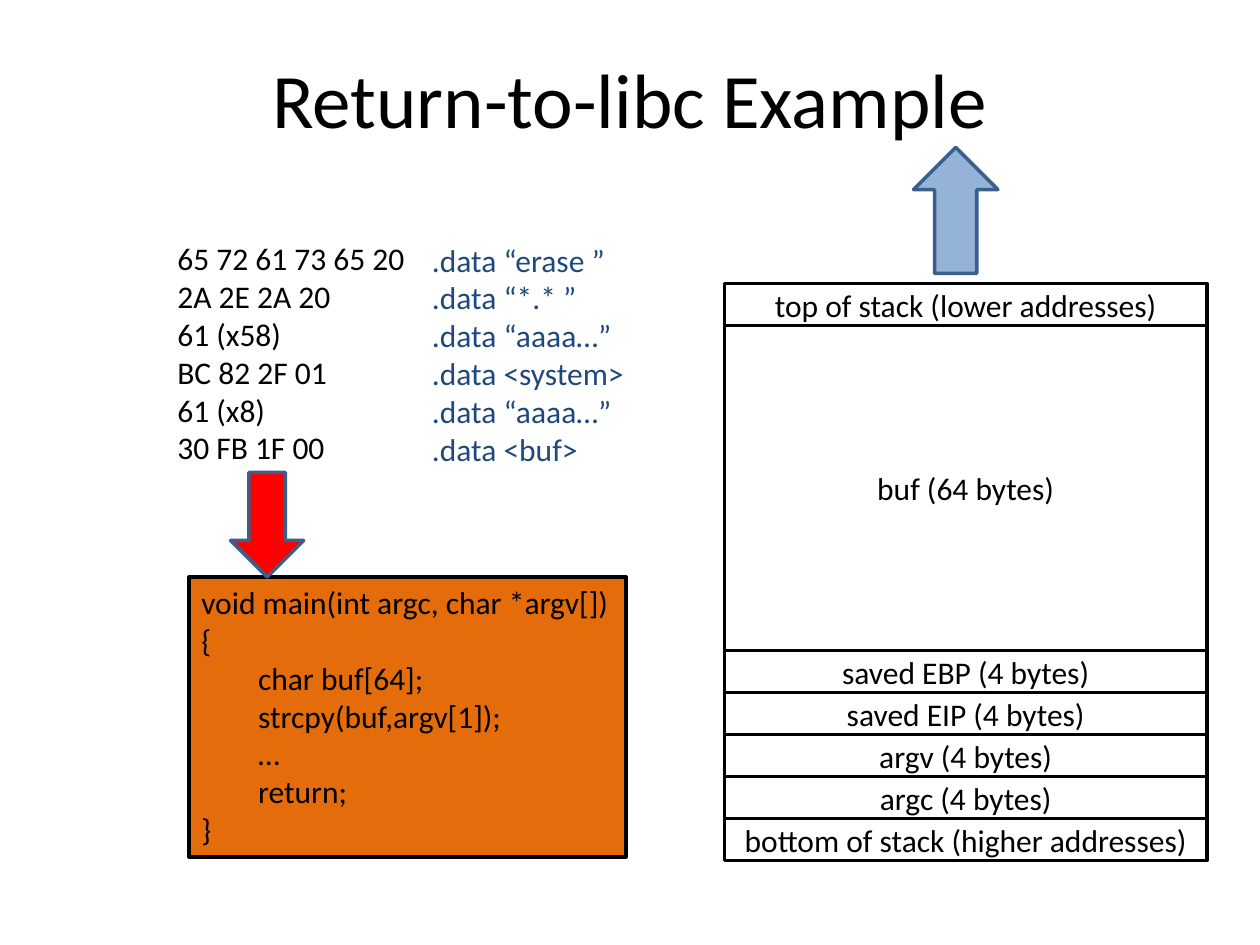
from dataclasses import dataclass

from pptx import Presentation
from pptx.dml.color import RGBColor
from pptx.enum import shapes, text
from pptx.util import Inches, Pt

FONT = "Calibri"
BLACK, NAVY, STEEL = "000000", "1F497D", "3A5F8C"
CODE_INDENT = 0.45


@dataclass
class Box:
    left: float
    top: float
    width: float
    height: float

    def lengths(self) -> list:
        return [Inches(v) for v in (self.left, self.top, self.width, self.height)]


@dataclass
class StackSlot:
    label: str
    height: float = 1 / 3


@dataclass
class Arrow:
    kind: shapes.MSO_SHAPE
    box: Box
    fill: str


def colour(hex_value: str) -> RGBColor:
    return RGBColor.from_string(hex_value)


def write_lines(shape, lines: list[str], size: float = 18, ink: str = BLACK,
                align=text.PP_ALIGN.LEFT, anchor=text.MSO_ANCHOR.TOP,
                wrap: bool = False) -> None:
    """Fill a shape with one paragraph per line; a leading tab indents it."""
    frame = shape.text_frame
    frame.word_wrap = wrap
    frame.vertical_anchor = anchor
    for number, line in enumerate(lines):
        paragraph = frame.paragraphs[0] if number == 0 else frame.add_paragraph()
        paragraph.text = line.lstrip("\t")
        paragraph.alignment = align
        paragraph.font.name = FONT
        paragraph.font.size = Pt(size)
        paragraph.font.color.rgb = colour(ink)
        if line.startswith("\t"):
            properties = paragraph._p.get_or_add_pPr()
            properties.set("marL", str(Inches(CODE_INDENT)))
            properties.set("indent", "0")


def draw_shape(slide, kind, box: Box, fill: str | None = None, line: str = BLACK):
    shape = slide.shapes.add_shape(kind, *box.lengths())
    shape.shadow.inherit = False
    if fill:
        shape.fill.solid()
        shape.fill.fore_color.rgb = colour(fill)
    else:
        shape.fill.background()
    shape.line.color.rgb = colour(line)
    shape.line.width = Pt(2)
    return shape


def draw_stack(slide, slots: list[StackSlot], left: float, top: float, width: float) -> None:
    for slot in slots:
        cell = draw_shape(slide, shapes.MSO_SHAPE.RECTANGLE,
                          Box(left, top, width, slot.height))
        write_lines(cell, [slot.label], align=text.PP_ALIGN.CENTER,
                    anchor=text.MSO_ANCHOR.MIDDLE, wrap=True)
        top += slot.height


PAYLOAD_BYTES = ["65 72 61 73 65 20", "2A 2E 2A 20", "61 (x58)",
                 "BC 82 2F 01", "61 (x8)", "30 FB 1F 00"]
PAYLOAD_MEANING = [".data “erase ”", ".data “*.* ”", ".data “aaaa…”",
                   ".data <system>", ".data “aaaa…”", ".data <buf>"]
PROGRAM = ["void main(int argc, char *argv[])", "{", "\tchar buf[64];",
           "\tstrcpy(buf,argv[1]);", "\t…", "\treturn;", "}"]
STACK = [
    StackSlot("top of stack (lower addresses)"),
    StackSlot("buf (64 bytes)", 2.58),
    StackSlot("saved EBP (4 bytes)"),
    StackSlot("saved EIP (4 bytes)"),
    StackSlot("argv (4 bytes)"),
    StackSlot("argc (4 bytes)"),
    StackSlot("bottom of stack (higher addresses)"),
]
ARROWS = [
    Arrow(shapes.MSO_SHAPE.DOWN_ARROW, Box(1.83, 3.75, 0.58, 0.83), "FF0000"),
    Arrow(shapes.MSO_SHAPE.UP_ARROW, Box(7.25, 1.17, 0.67, 1), "95B3D7"),
]


def main() -> None:
    deck = Presentation()
    deck.slide_width, deck.slide_height = Inches(10), Inches(7.5)
    slide = deck.slides.add_slide(deck.slide_layouts[6])

    # Title
    title = slide.shapes.add_textbox(*Box(0.5, 0.3, 9, 0.95).lengths())
    write_lines(title, ["Return-to-libc Example"], size=44, wrap=True,
                align=text.PP_ALIGN.CENTER, anchor=text.MSO_ANCHOR.MIDDLE)

    # Vulnerable program
    program = draw_shape(slide, shapes.MSO_SHAPE.RECTANGLE,
                         Box(1.5, 4.58, 3.47, 2.22), "E46C0A")
    write_lines(program, PROGRAM)

    # Attack payload and what its bytes mean
    meaning = slide.shapes.add_textbox(*Box(3.33, 1.86, 1.74, 1.92).lengths())
    write_lines(meaning, PAYLOAD_MEANING, ink=NAVY)
    payload = slide.shapes.add_textbox(*Box(1.31, 1.85, 2.03, 1.92).lengths())
    write_lines(payload, PAYLOAD_BYTES)

    # Stack layout
    draw_stack(slide, STACK, left=5.75, top=2.25, width=3.83)

    # Payload input and stack growth arrows
    for arrow in ARROWS:
        draw_shape(slide, arrow.kind, arrow.box, arrow.fill, STEEL)

    deck.save("out.pptx")


if __name__ == "__main__":
    main()
